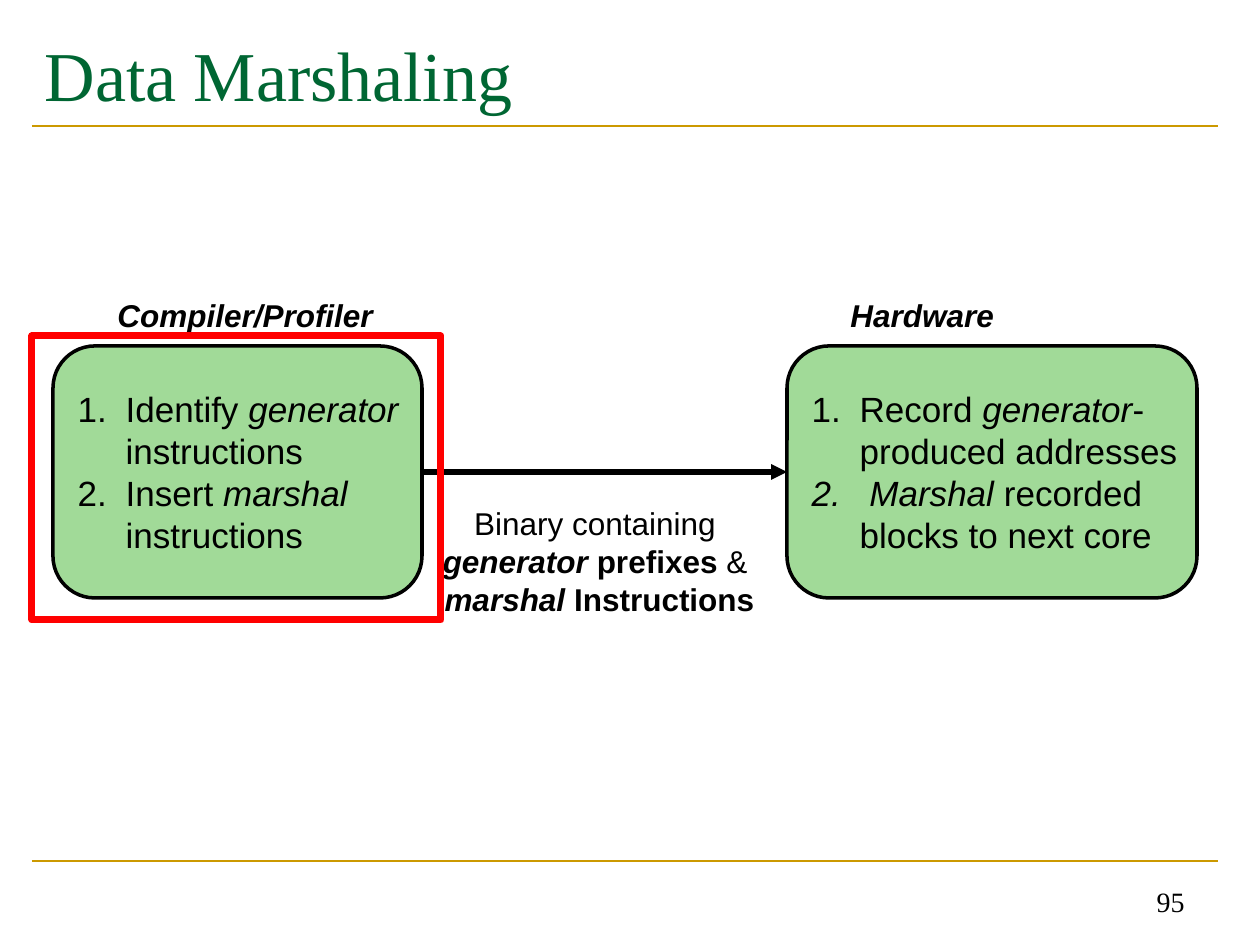
from lxml import etree
from pptx import Presentation
from pptx.dml.color import RGBColor
from pptx.enum.shapes import MSO_CONNECTOR, MSO_SHAPE
from pptx.enum.text import MSO_ANCHOR, PP_ALIGN
from pptx.oxml.ns import qn
from pptx.util import Pt

STRAIGHT = MSO_CONNECTOR.STRAIGHT
ROUNDED, RECTANGLE = MSO_SHAPE.ROUNDED_RECTANGLE, MSO_SHAPE.RECTANGLE
MIDDLE, BOTTOM = MSO_ANCHOR.MIDDLE, MSO_ANCHOR.BOTTOM
LEFT, CENTER, RIGHT = PP_ALIGN.LEFT, PP_ALIGN.CENTER, PP_ALIGN.RIGHT
EMU_PER_PX = 914400 / 126
BLACK, GREEN, GOLD, RED = "000000", "A1DA98", "CC9900", "FF0000"


def px(*lengths):
    return [round(length * EMU_PER_PX) for length in lengths]


def write(paragraph, runs, size, font="Arial", color=BLACK, align=LEFT):
    paragraph.alignment = align
    paragraph.font.size = Pt(size)
    paragraph.font.name = font
    paragraph.font.color.rgb = RGBColor.from_string(color)
    for text, style in runs:
        if text == "\n":
            paragraph.add_line_break()
            continue
        run = paragraph.add_run()
        run.text = text
        if "b" in style:
            run.font.bold = True
        if "i" in style:
            run.font.italic = True


presentation = Presentation()
presentation.slide_width, presentation.slide_height = px(1260, 945)
slide = presentation.slides.add_slide(presentation.slide_layouts[5])
shapes = slide.shapes

title = shapes.title
title.left, title.top, title.width, title.height = px(32, 21, 1186, 105)
title.text_frame.vertical_anchor = MIDDLE
write(title.text_frame.paragraphs[0], [("Data Marshaling", "")], 40,
      "Times New Roman", "006633")

steps = [
    (53, 369, [
        [("Identify ", ""), ("generator", "i"), ("\n", ""), ("instructions", "")],
        [("Insert ", ""), ("marshal", "i"), ("\n", ""), ("instructions", "")],
    ]),
    (787, 410, [
        [("Record ", ""), ("generator", "i"), ("-", ""), ("\n", ""),
         ("produced addresses", "")],
        [(" Marshal ", "i"), ("recorded", ""), ("\n", ""),
         ("blocks to next core", "")],
    ]),
]
boxes = []
for left, width, items in steps:
    box = shapes.add_shape(ROUNDED, *px(left, 346, width, 252))
    box.shadow.inherit = False
    box.fill.solid()
    box.fill.fore_color.rgb = RGBColor.from_string(GREEN)
    box.line.color.rgb = RGBColor.from_string(BLACK)
    box.line.width = Pt(2)
    frame = box.text_frame
    frame.word_wrap = False
    frame.vertical_anchor = MIDDLE
    for index, runs in enumerate(items):
        paragraph = frame.add_paragraph() if index else frame.paragraphs[0]
        write(paragraph, runs, 20)
        properties = paragraph._p.get_or_add_pPr()
        indent = px(48)[0]
        properties.set("marL", str(indent))
        properties.set("indent", str(-indent))
        numbering = etree.Element(qn("a:buAutoNum"), type="arabicPeriod")
        properties.insert(0, numbering)
    boxes.append(box)

rules = [shapes.add_connector(STRAIGHT, *px(32, y, 1218, y)) for y in (126, 861)]
arrow = shapes.add_connector(STRAIGHT, *px(422, 472, 787, 472))
arrow.begin_connect(boxes[0], 3)
arrow.end_connect(boxes[1], 1)
for line, color, width in [(rules[0], GOLD, 1.5), (rules[1], GOLD, 1.5),
                           (arrow, BLACK, 3)]:
    line.line.color.rgb = RGBColor.from_string(color)
    line.line.width = Pt(width)
    etree.SubElement(line._element.spPr, qn("a:effectLst"))
etree.SubElement(arrow.line._get_or_add_ln(), qn("a:tailEnd"), type="triangle")

binary_runs = [
    ("Binary containing ", ""), ("\n", ""),
    ("generator ", "bi"), ("prefixes", "b"), (" & ", ""), ("\n", ""),
    ("marshal", "bi"), (" Instructions", "b"),
]
labels = [
    ((422, 498, 355, 126), binary_runs, 18, "Arial", CENTER),
    ((838, 290, 239, 50), [("Hardware", "bi")], 18, "Arial", LEFT),
    ((105, 290, 286, 50), [("Compiler/Profiler", "bi")], 18, "Arial", LEFT),
    ((903, 861, 294, 63), [("95", "")], 16, "Times New Roman", RIGHT),
]
for bounds, runs, size, font, align in labels:
    label = shapes.add_textbox(*px(*bounds))
    label.text_frame.word_wrap = True
    write(label.text_frame.paragraphs[0], runs, size, font, align=align)
label.text_frame.vertical_anchor = BOTTOM

highlight = shapes.add_shape(RECTANGLE, *px(32, 336, 409, 284))
highlight.shadow.inherit = False
highlight.fill.background()
highlight.line.color.rgb = RGBColor.from_string(RED)
highlight.line.width = Pt(4)

presentation.save("out.pptx")
